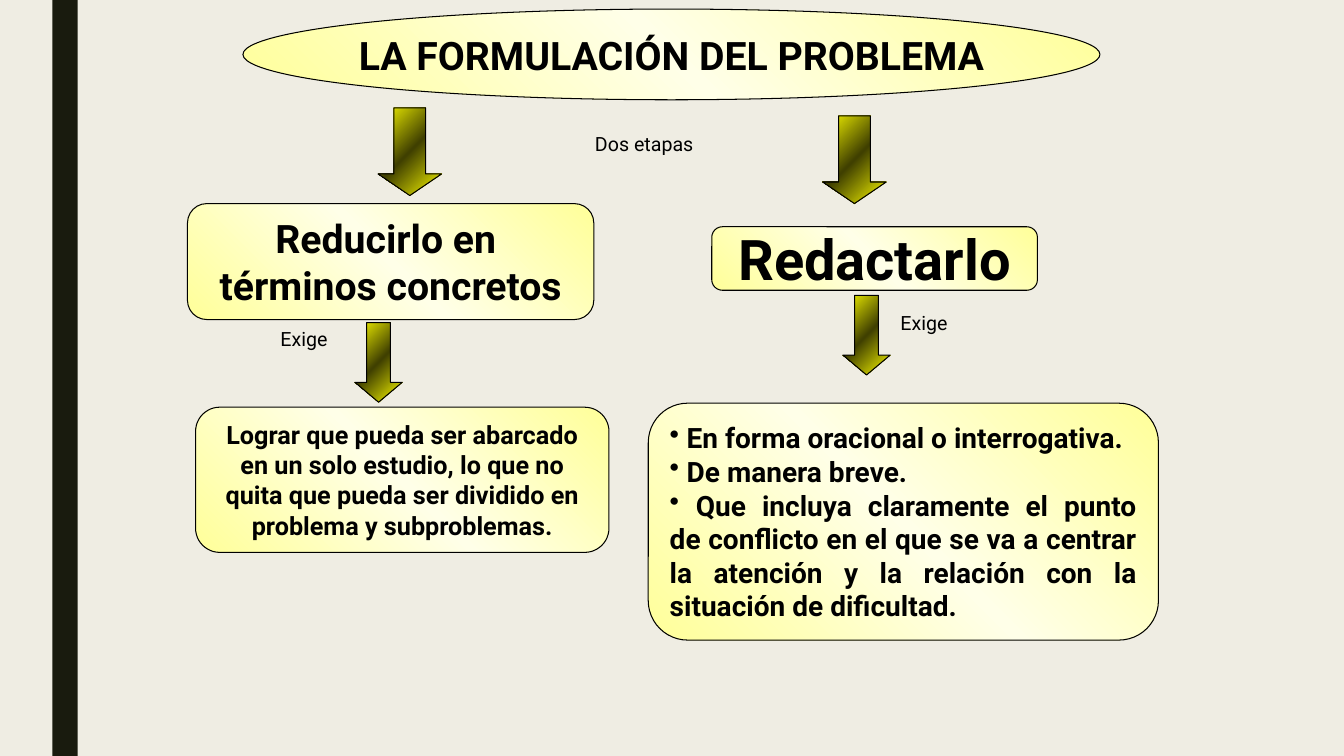
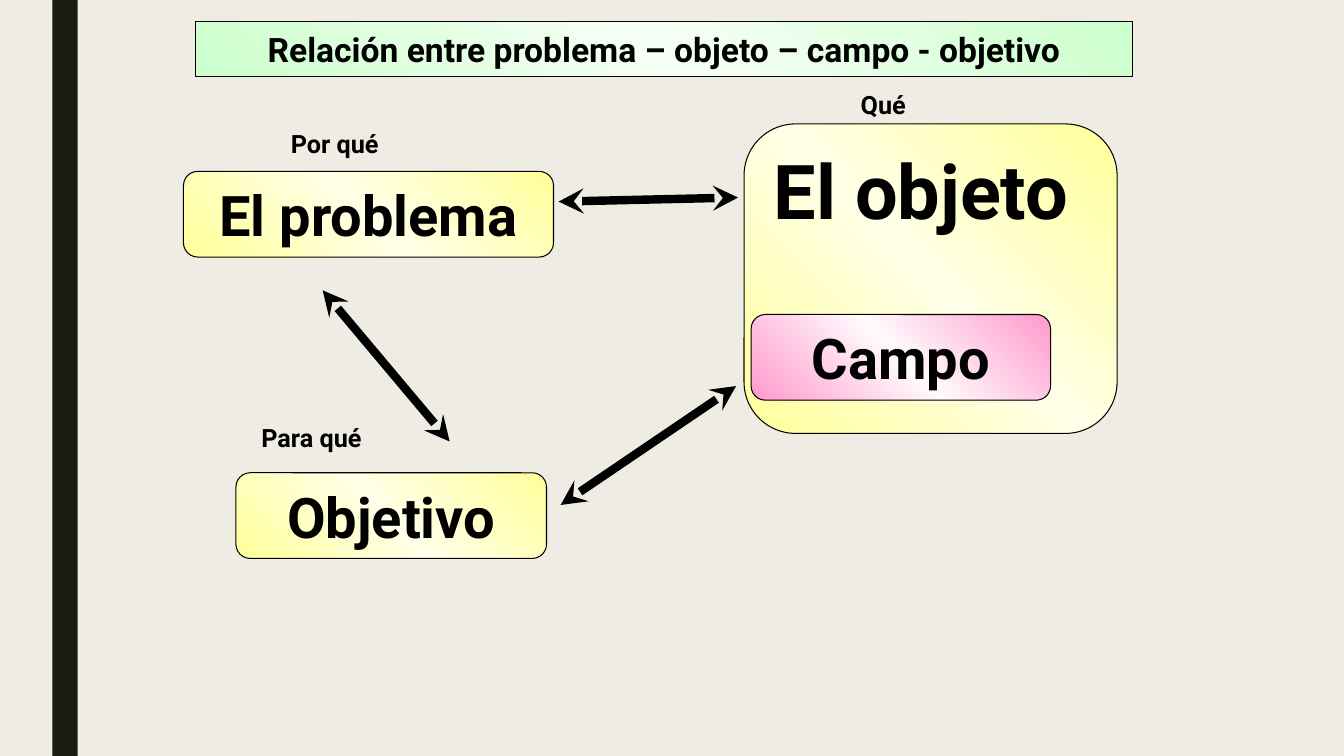
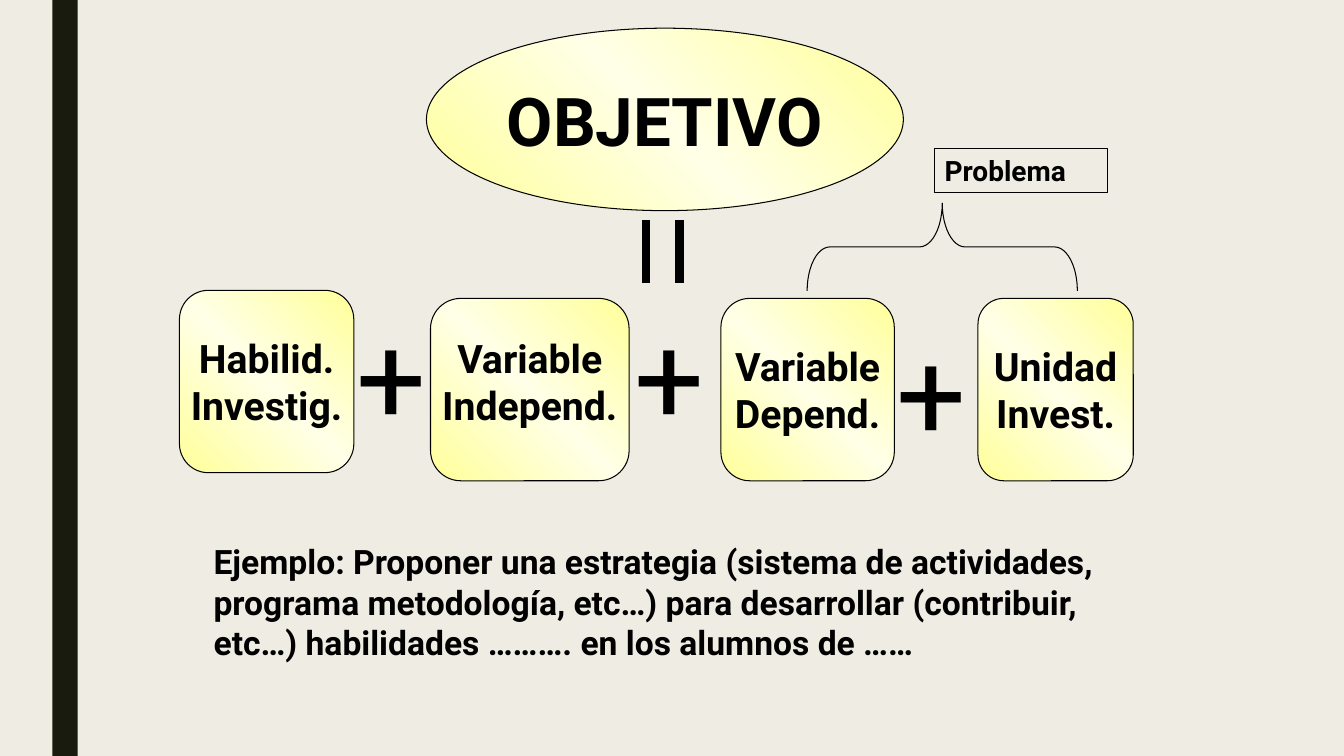
from copy import deepcopy

from lxml import etree
from pptx import Presentation
from pptx.dml.color import RGBColor
from pptx.enum import shapes, text
from pptx.oxml.ns import qn
from pptx.util import Inches, Pt

PAPER = RGBColor(0xEF, 0xED, 0xE3)
BAND = RGBColor(0x19, 0x1B, 0x0E)
INK = RGBColor(0, 0, 0)
YELLOW = (RGBColor(0xFF, 0xFF, 0x99), RGBColor(0xFF, 0xFF, 0xE8))
GREEN = (RGBColor(0xCC, 0xFF, 0xCC), RGBColor(0xF6, 0xFF, 0xF6))
PINK = (RGBColor(0xFF, 0x99, 0xCC), RGBColor(0xFF, 0xFA, 0xFC))
OLIVE = (RGBColor(0xFF, 0xFF, 0), RGBColor(0x40, 0x40, 0))
FONT = "Roboto"
KIND = shapes.MSO_SHAPE
ALIGN = text.PP_ALIGN
ANCHOR = text.MSO_ANCHOR


class Deck:
    """Holds the shared style and the slide being drawn."""

    def __init__(self):
        self.prs = Presentation()
        self.prs.slide_width = Inches(13.33)
        self.prs.slide_height = Inches(7.5)
        fill = self.prs.slide_master.background.fill
        fill.solid()
        fill.fore_color.rgb = PAPER

    def page(self):
        self.slide = self.prs.slides.add_slide(self.prs.slide_layouts[6])
        band = self.shape(KIND.RECTANGLE, (0.52, 0, 0.25, 7.5), edge=False)
        band.fill.solid()
        band.fill.fore_color.rgb = BAND

    def shape(self, kind, at, tint=None, angle=45, edge=True):
        item = self.slide.shapes.add_shape(kind, *map(Inches, at))
        item.shadow.inherit = False
        if tint:
            self.blend(item, tint, angle)
        else:
            item.fill.background()
        if edge:
            item.line.color.rgb = INK
            item.line.width = Pt(0.75)
        else:
            item.line.fill.background()
        return item

    def blend(self, item, tint, angle):
        item.fill.gradient()
        item.fill.gradient_angle = angle
        stops = item.element.spPr.find(qn("a:gradFill")).find(qn("a:gsLst"))
        stops.insert(1, deepcopy(stops[0]))
        edge, core = tint
        marks = zip(item.fill.gradient_stops, (0, 0.5, 1), (edge, core, edge))
        for stop, place, color in marks:
            stop.position = place
            stop.color.rgb = color

    def label(self, item, lines, size, bold=True, align=ALIGN.CENTER,
              anchor=ANCHOR.MIDDLE, wrap=True, bullet=None):
        frame = item.text_frame
        frame.word_wrap = wrap
        frame.vertical_anchor = anchor
        for i, line in enumerate(lines):
            par = frame.paragraphs[0] if i == 0 else frame.add_paragraph()
            par.alignment = align
            if bullet:
                mark = etree.SubElement(par._p.get_or_add_pPr(), qn("a:buChar"))
                mark.set("char", bullet)
            for j, part in enumerate(line.split("\n")):
                if j:
                    par.add_line_break()
                run = par.add_run()
                run.text = part
                run.font.name = FONT
                run.font.size = Pt(size)
                run.font.bold = bold
                run.font.color.rgb = INK

    def box(self, at, lines, size, kind=KIND.ROUNDED_RECTANGLE, tint=YELLOW, **style):
        item = self.shape(kind, at, tint)
        self.label(item, lines, size, **style)
        return item

    def tag(self, at, words):
        item = self.shape(KIND.ROUNDED_RECTANGLE, at, edge=False)
        self.label(item, [words], 14, bold=False, wrap=False)

    def note(self, at, words, size, **style):
        item = self.slide.shapes.add_textbox(*map(Inches, at))
        self.label(item, [words], size, anchor=ANCHOR.TOP, **style)

    def arrow(self, at, head):
        item = self.shape(KIND.DOWN_ARROW, at, OLIVE, 315)
        item.adjustments[1] = head

    def line(self, ends, tips=False):
        item = self.slide.shapes.add_connector(
            shapes.MSO_CONNECTOR.STRAIGHT, *map(Inches, ends))
        item.line.color.rgb = INK
        item.line.width = Pt(6)
        if tips:
            for end in ("a:headEnd", "a:tailEnd"):
                etree.SubElement(item.get_or_add_ln(), qn(end)).set("type", "stealth")
        etree.SubElement(item.element.spPr, qn("a:effectLst"))


def stages(deck):
    deck.page()
    deck.box((2.41, 0.09, 8.5, 0.9), ["LA FORMULACIÓN DEL PROBLEMA"], 28,
             kind=KIND.OVAL, wrap=False)
    deck.box((1.94, 4.04, 4.1, 1.44),
             ["Lograr que pueda ser abarcado en un solo estudio, lo que no quita "
              "que pueda ser dividido en problema y subproblemas."], 18)
    deck.box((7.06, 2.25, 3.23, 0.63), ["Redactarlo"], 40, wrap=False)
    deck.box((1.86, 2.02, 4.03, 1.15), ["Reducirlo en ", "términos concretos"], 28)
    deck.box((6.43, 4, 5.06, 2.35),
             [" En forma oracional o interrogativa.",
              " De manera breve.",
              " Que incluya claramente el punto\nde conflicto en el que se va a "
              "centrar la atención y la relación con la situación de dificultad."],
             20, align=ALIGN.JUSTIFY, bullet="•")
    for x, y in ((3.75, 1.07), (8.16, 1.15)):
        deck.arrow((x, y, 0.63, 0.87), 0.34)
    for x, y in ((3.52, 3.2), (8.36, 2.93)):
        deck.arrow((x, y, 0.47, 0.79), 0.42)
    deck.tag((5.64, 1.07, 1.5, 0.71), "Dos etapas")
    for x, y in ((2.41, 3.2), (8.56, 3.04)):
        deck.tag((x, y, 1.26, 0.32), "Exige ")


def links(deck):
    deck.page()
    deck.box((7.38, 1.23, 3.7, 3.07), ["El objeto "], 54,
             anchor=ANCHOR.TOP, wrap=False)
    for x, y, wide, word, tint in ((1.82, 1.7, 3.67, "El problema", YELLOW),
                                   (2.34, 4.69, 3.08, "Objetivo", YELLOW),
                                   (7.45, 3.12, 2.97, "Campo", PINK)):
        deck.box((x, y, wide, 0.85), [word], 40, tint=tint)
    deck.box((1.94, 0.21, 9.29, 0.55),
             ["Relación entre problema – objeto – campo - objetivo"], 24,
             kind=KIND.RECTANGLE, tint=GREEN, wrap=False)
    for ends in ((5.54, 2, 7.32, 1.96), (3.2, 2.88, 4.46, 4.38),
                 (5.56, 5.01, 7.3, 3.83)):
        deck.line(ends, tips=True)
    for x, y, word in ((2.57, 1.22, "Por qué"), (8.01, 0.84, "Qué"),
                       (2.34, 4.14, "Para qué")):
        deck.note((x, y, 1.5, 0.4), word, 18)


def goal(deck):
    deck.page()
    deck.box((4.23, 0.28, 4.73, 1.81), ["OBJETIVO"], 48, kind=KIND.OVAL, wrap=False)
    for x in (6.41, 6.74):
        deck.line((x, 2.18, x, 2.81))
    for x, y, wide, lines, foot in (
            (1.78, 2.88, 1.73, ["Habilid.", "Investig."], 0.05),
            (4.27, 2.96, 1.97, ["Variable", "Independ."], 0.22),
            (7.15, 2.96, 1.72, ["Variable", "Depend."], 0.05),
            (9.7, 2.96, 1.54, ["Unidad", "Invest."], 0.05)):
        card = deck.box((x, y, wide, 1.81), lines, 28, wrap=False)
        card.text_frame.margin_bottom = Inches(foot)
    for x, y in ((3.44, 2.93), (6.19, 2.93), (8.79, 3.09)):
        deck.note((x, y, 0.87, 1.57), "+", 88, bold=False, align=ALIGN.LEFT)
    deck.box((9.27, 1.47, 1.71, 0.44), ["Problema"], 20, kind=KIND.RECTANGLE,
             tint=None, align=ALIGN.LEFT, anchor=ANCHOR.TOP)
    brace = deck.shape(KIND.LEFT_BRACE, (8.91, 1.11, 0.87, 2.68))
    brace.rotation = 90
    brace.adjustments[0] = 0.26
    deck.note((2.02, 5.32, 8.98, 1.31),
              "Ejemplo: Proponer una estrategia (sistema de actividades, programa "
              "metodología, etc…) para desarrollar (contribuir, etc…) habilidades "
              "………. en los alumnos de ……", 24, align=ALIGN.LEFT)


def main():
    deck = Deck()
    for draw in (stages, links, goal):
        draw(deck)
    deck.prs.save("out.pptx")


if __name__ == "__main__":
    main()
